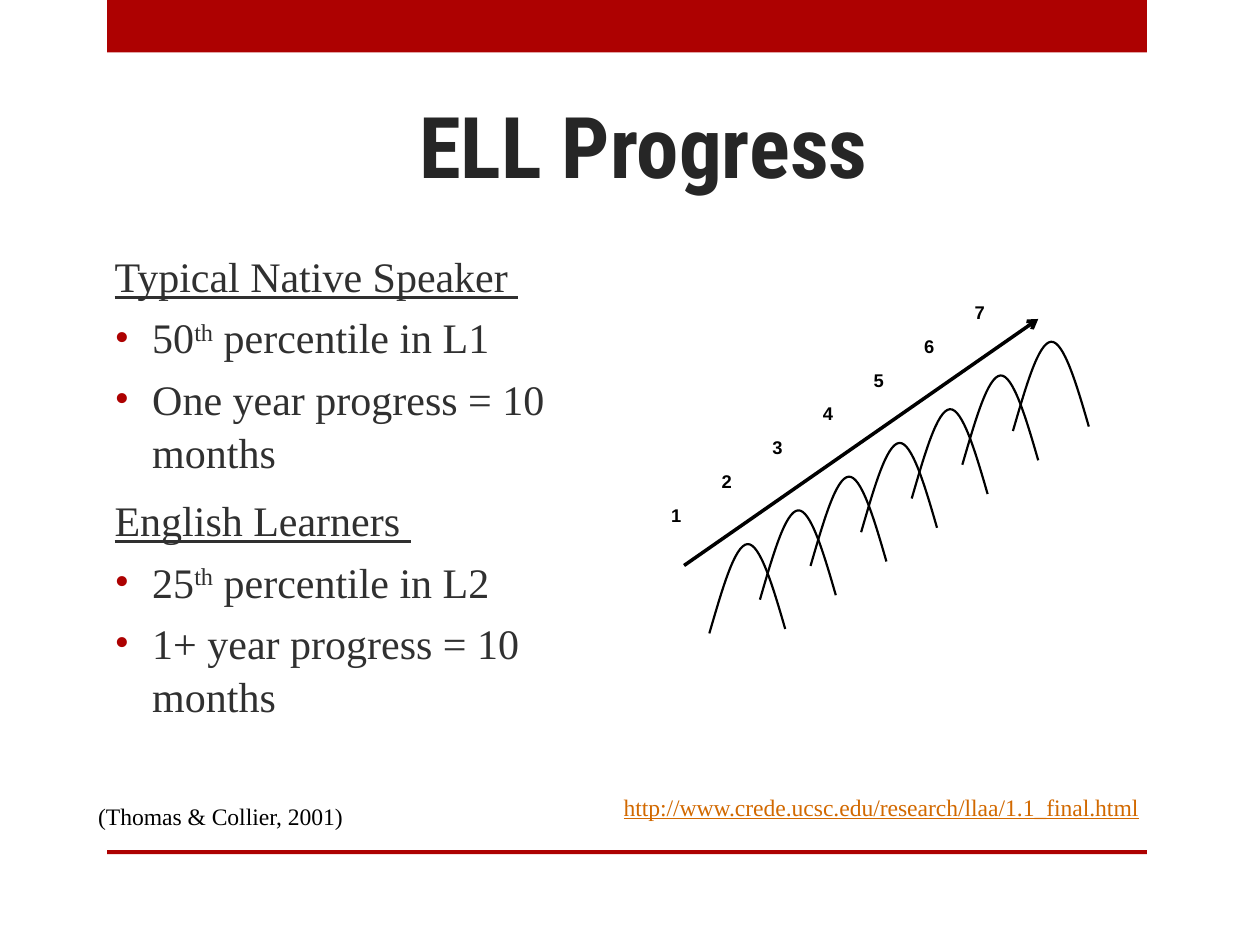
from lxml.etree import SubElement
from pptx import Presentation
from pptx.dml.color import RGBColor
from pptx.enum.shapes import MSO_CONNECTOR, MSO_SHAPE
from pptx.enum.text import MSO_ANCHOR as ANCHOR, PP_ALIGN as ALIGN
from pptx.oxml.ns import qn
from pptx.util import Cm, Pt

RED, BLACK, GREY = "AD0101", "000000", "303030"
SERIF = "Times New Roman"
ARC = [(0, 1.82), (0.26, 0.93), (0.51, 0.04), (0.77, 0.02),
       (1.02, 0), (1.28, 0.86), (1.53, 1.73)]
STEP_X, STEP_Y = 1.02, -0.68
YEARS = 7


def color(hex_code):
    """Turn a hex string into a colour."""
    return RGBColor.from_string(hex_code)


def add_run(paragraph, text, size, font, hex_code, bold=False, underline=False):
    """Add one formatted run to a paragraph."""
    run = paragraph.add_run()
    run.text = text
    run.font.size, run.font.name = Pt(size), font
    run.font.bold, run.font.underline = bold, underline
    run.font.color.rgb = color(hex_code)
    return run


def add_text(shapes, box, wrap=True):
    """Add an empty text box and return its frame."""
    frame = shapes.add_textbox(*map(Cm, box)).text_frame
    frame.word_wrap = wrap
    return frame


def add_bar(slide, box):
    """Draw one red band."""
    bar = slide.shapes.add_shape(MSO_SHAPE.RECTANGLE, *map(Cm, box))
    bar.shadow.inherit = False
    bar.fill.solid()
    bar.fill.fore_color.rgb = color(RED)
    bar.line.fill.background()


def place_title(slide, box, text):
    """Move, fill and format the title placeholder."""
    title = slide.shapes.title
    title.left, title.top, title.width, title.height = map(Cm, box)
    frame = title.text_frame
    frame.vertical_anchor = ANCHOR.BOTTOM
    frame.margin_bottom = 0
    heading = frame.paragraphs[0]
    heading.alignment = ALIGN.CENTER
    add_run(heading, text, 48.6, "Roboto Condensed", "262626", bold=True)


def add_bullet(paragraph):
    """Give a paragraph a red hanging bullet."""
    properties = paragraph._p.get_or_add_pPr()
    properties.set("marL", str(Cm(0.76)))
    properties.set("indent", str(-Cm(0.76)))
    bullet_color = SubElement(properties, qn("a:buClr"))
    SubElement(bullet_color, qn("a:srgbClr"), val=RED)
    SubElement(properties, qn("a:buFont"), typeface=SERIF)
    SubElement(properties, qn("a:buChar"), char="•")


def add_group_facts(slide, box, heading, percentile, level, progress):
    """Write an underlined heading with its two bullets."""
    frame = add_text(slide.shapes, box)
    frame.vertical_anchor = ANCHOR.TOP
    first = frame.paragraphs[0]
    add_run(first, heading, 24, SERIF, GREY, underline=True)
    rank, pace = frame.add_paragraph(), frame.add_paragraph()
    for bullet in (rank, pace):
        add_bullet(bullet)
        bullet.space_before = Pt(4.8)
    for line in frame.paragraphs:
        line.line_spacing = 1.05
    add_run(rank, percentile, 24, SERIF, GREY)
    ordinal = add_run(rank, "th", 24, SERIF, GREY)
    ordinal._r.get_or_add_rPr().set("baseline", "30000")
    add_run(rank, f" percentile in {level}", 24, SERIF, GREY)
    add_run(pace, progress, 24, SERIF, GREY)


def add_arc(shapes, left, top):
    """Draw one bell curve made of two Bézier segments."""
    points = [(Cm(left + x), Cm(top + y)) for x, y in ARC]
    builder = shapes.build_freeform(*points[0])
    builder.add_line_segments(points[1:], close=False)
    arc = builder.convert_to_shape()
    arc.shadow.inherit = False
    arc.fill.background()
    arc.line.color.rgb = color(BLACK)
    arc.line.width = Pt(1.25)
    path = next(arc._element.iter(qn("a:path")))
    segments = path.findall(qn("a:lnTo"))
    for start in range(0, len(segments), 3):
        curve = SubElement(path, qn("a:cubicBezTo"))
        for segment in segments[start:start + 3]:
            curve.append(segment[0])
            path.remove(segment)


def add_progress_chart(slide, left, top):
    """Draw the rising arrow with numbered years and bell curves."""
    shapes = slide.shapes.add_group_shape().shapes
    arrow = shapes.add_connector(
        MSO_CONNECTOR.STRAIGHT, Cm(left + 0.51), Cm(top + 5.46),
        Cm(left + 7.65), Cm(top + 0.49))
    arrow.line.color.rgb = color(BLACK)
    arrow.line.width = Pt(2)
    SubElement(arrow.line._get_or_add_ln(), qn("a:tailEnd"), type="arrow")
    SubElement(arrow._element.spPr, qn("a:effectLst"))
    for year in range(YEARS):
        x, y = left + year * STEP_X, top + year * STEP_Y
        label = add_text(shapes, (x, y + 4.09, 1.02, 0.71))
        add_run(label.paragraphs[0], str(year + 1), 10.5, "Arial", BLACK, bold=True)
        add_arc(shapes, x + 1.02, y + 5.01)


def add_sources(slide, left, top):
    """Write the citation and the web address of the study."""
    citation = add_text(slide.shapes, (left, top + 0.2, 5.51, 0.84), wrap=False)
    add_run(citation.paragraphs[0], "(Thomas & Collier, 2001)", 13.5, SERIF, BLACK)
    address = add_text(slide.shapes, (left + 10.59, top, 11.66, 0.84))
    add_run(address.paragraphs[0],
            "http://www.crede.ucsc.edu/research/llaa/1.1_final.html",
            13.5, SERIF, "D26900", underline=True)


def main():
    """Build the slide and save it."""
    deck = Presentation()
    deck.slide_width, deck.slide_height = Cm(25.4), Cm(19.05)
    slide = deck.slides.add_slide(deck.slide_layouts[5])
    add_bar(slide, (2.16, 0, 20.96, 1.06))
    add_bar(slide, (2.16, 17.14, 20.96, 0.08))
    place_title(slide, (1.73, 1.55, 22.48, 2.39), "ELL Progress")
    add_group_facts(slide, (2.06, 4.88, 10.29, 4.45), "Typical Native Speaker ",
                    "50", "L1", "One year progress = 10 months")
    add_progress_chart(slide, 13.28, 5.94)
    add_group_facts(slide, (2.06, 9.8, 10.29, 4.45), "English Learners ",
                    "25", "L2", "1+ year progress = 10 months")
    add_sources(slide, 1.73, 15.85)
    deck.save("out.pptx")


if __name__ == "__main__":
    main()
